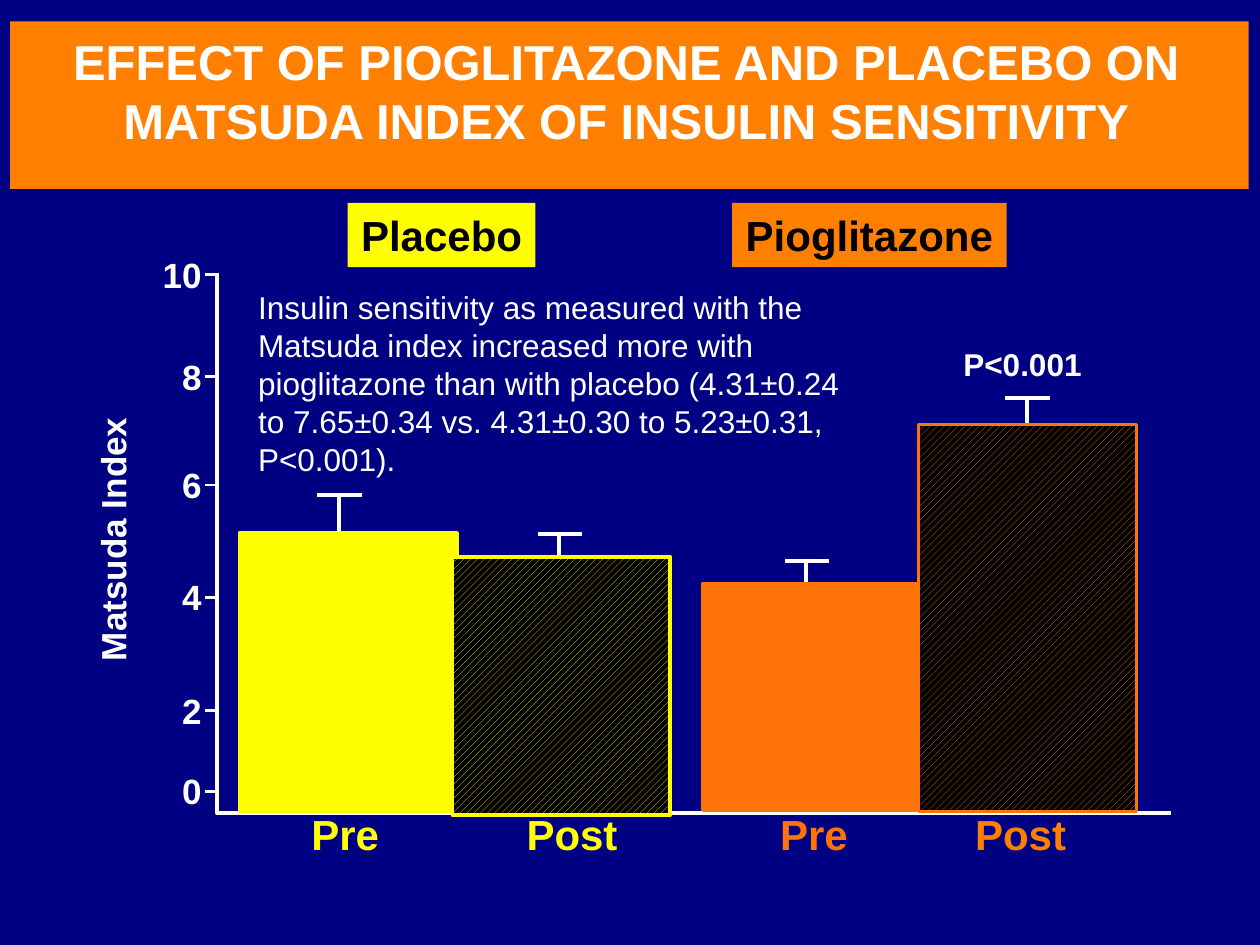
from pptx import Presentation
from pptx.dml.color import RGBColor as RGB
from pptx.enum.dml import MSO_PATTERN as PAT
from pptx.enum.shapes import MSO_CONNECTOR as CON, MSO_SHAPE as SHP
from pptx.enum.text import MSO_ANCHOR as ANC, MSO_AUTO_SIZE as FIT, PP_ALIGN as AL
from pptx.oxml.ns import qn
from pptx.util import Inches, Pt
from lxml.etree import SubElement

HEX = {"navy": "000083", "orange": "FF7F00", "rust": "FF7308",
       "yellow": "FFFF00", "white": "FFFFFF", "black": "000000"}
INK = {name: RGB.from_string(code) for name, code in HEX.items()}

deck = Presentation()
deck.slide_width, deck.slide_height = Inches(10), Inches(7.5)
col, row = deck.slide_width / 10, deck.slide_height / 7.5
slide = deck.slides.add_slide(deck.slide_layouts[5])
slide.background.fill.solid()
slide.background.fill.fore_color.rgb = INK["navy"]
shapes = slide.shapes


def write(shape, text, size, ink, align=AL.CENTER, bold=True, wrap=True, pad=True):
    frame = shape.text_frame
    frame.text = text
    frame.word_wrap = wrap
    frame.auto_size = FIT.NONE
    frame.vertical_anchor = ANC.TOP
    if not pad:
        frame.margin_left = frame.margin_right = 0
        frame.margin_top = frame.margin_bottom = 0
    para = frame.paragraphs[0]
    para.alignment = align
    font = para.font
    font.name, font.size, font.bold = "Arial", Pt(size), bold
    font.color.rgb = INK[ink]


def rule(x1, y1, x2, y2, width):
    line = shapes.add_connector(CON.STRAIGHT, *map(int, (x1 * col, y1 * row, x2 * col, y2 * row)))
    line.line.color.rgb = INK["white"]
    line.line.width = Pt(width)
    SubElement(line._element.spPr, qn("a:effectLst"))


def cells(x, y, w, h):
    return [int(n) for n in (x * col, y * row, w * col, h * row)]


title = shapes.title
banner = shapes.add_shape(SHP.RECTANGLE, *cells(0.08, 0.17, 9.83, 1.33))
banner.shadow.inherit = False
banner.fill.solid()
banner.fill.fore_color.rgb = INK["orange"]
banner.line.fill.background()
title._element.addprevious(banner._element)
title.left, title.top, title.width, title.height = cells(-0.03, 0.2, 10, 1.65)
write(title, "EFFECT OF PIOGLITAZONE AND PLACEBO ON MATSUDA INDEX OF INSULIN SENSITIVITY", 28, "white")

left, base = 1.72, 6.45
pen = shapes.build_freeform(int(left * col), int(2.17 * row))
pen.add_line_segments([(int(left * col), int(base * row)), (int(9.29 * col), int(base * row))], close=False)
axis = pen.convert_to_shape()
axis.shadow.inherit = False
axis.fill.background()
axis.line.color.rgb = INK["white"]
axis.line.width = Pt(2.25)

for mark, y in zip(range(0, 11, 2), (6.28, 5.64, 4.74, 3.85, 2.99, 2.18)):
    rule(left - 0.09, y, left, y, 1.5)
    label = shapes.add_textbox(*cells(1.17, y - 0.17, 0.43, 0.34))
    write(label, str(mark), 20, "white", AL.RIGHT, pad=False)

bars = [
    ("Pre", 5.58, 4.63, 1.8, "rust", "rust", False, 6.4, 4.45, 6.46),
    ("Post", 7.29, 3.37, 3.07, "rust", "orange", True, 8.15, 3.16, 8.1),
    ("Pre", 1.9, 4.23, 2.21, "yellow", "yellow", False, 2.69, 3.93, 2.74),
    ("Post", 3.59, 4.42, 2.05, "yellow", "yellow", True, 4.44, 4.24, 4.54),
]
for name, x, y, high, edge, ink, hatch, mid, cap, spot in bars:
    rule(mid, cap, mid, cap + 0.88, 2.25)
    rule(mid - 0.17, cap, mid + 0.18, cap, 2.25)
    bar = shapes.add_shape(SHP.RECTANGLE, *cells(x, y, 1.73, high))
    bar.shadow.inherit = False
    if hatch:
        bar.fill.patterned()
        bar.fill.pattern = PAT.WIDE_UPWARD_DIAGONAL
        bar.fill.back_color.rgb = INK["black"]
    else:
        bar.fill.solid()
    bar.fill.fore_color.rgb = INK[ink if hatch else edge]
    bar.line.color.rgb = INK[edge]
    bar.line.width = Pt(2)
    label = shapes.add_textbox(*cells(spot - 0.61, 6.37, 1.22, 0.51))
    write(label, name, 24, ink)

for name, x, wide, ink in (("Placebo", 2.76, 1.49, "yellow"), ("Pioglitazone", 5.81, 2.18, "orange")):
    tag = shapes.add_shape(SHP.RECTANGLE, *cells(x, 1.61, wide, 0.51))
    tag.shadow.inherit = False
    tag.fill.solid()
    tag.fill.fore_color.rgb = INK[ink]
    tag.line.fill.background()
    write(tag, name, 24, "black", wrap=False)

scale = shapes.add_textbox(*cells(-0.18, 4.06, 2.15, 0.44))
scale.rotation = 270
write(scale, "Matsuda Index", 20, "white", wrap=False)
prob = shapes.add_textbox(*cells(7.54, 2.69, 1.15, 0.4))
write(prob, "P<0.001", 18, "white", wrap=False)
note = shapes.add_textbox(*cells(1.95, 2.24, 5, 1.62))
write(note, "Insulin sensitivity as measured with the Matsuda index increased more with "
      "pioglitazone than with placebo (4.31±0.24 to 7.65±0.34 vs. 4.31±0.30 to 5.23±0.31, P<0.001).",
      18, "white", AL.LEFT, bold=False)

deck.save("out.pptx")
